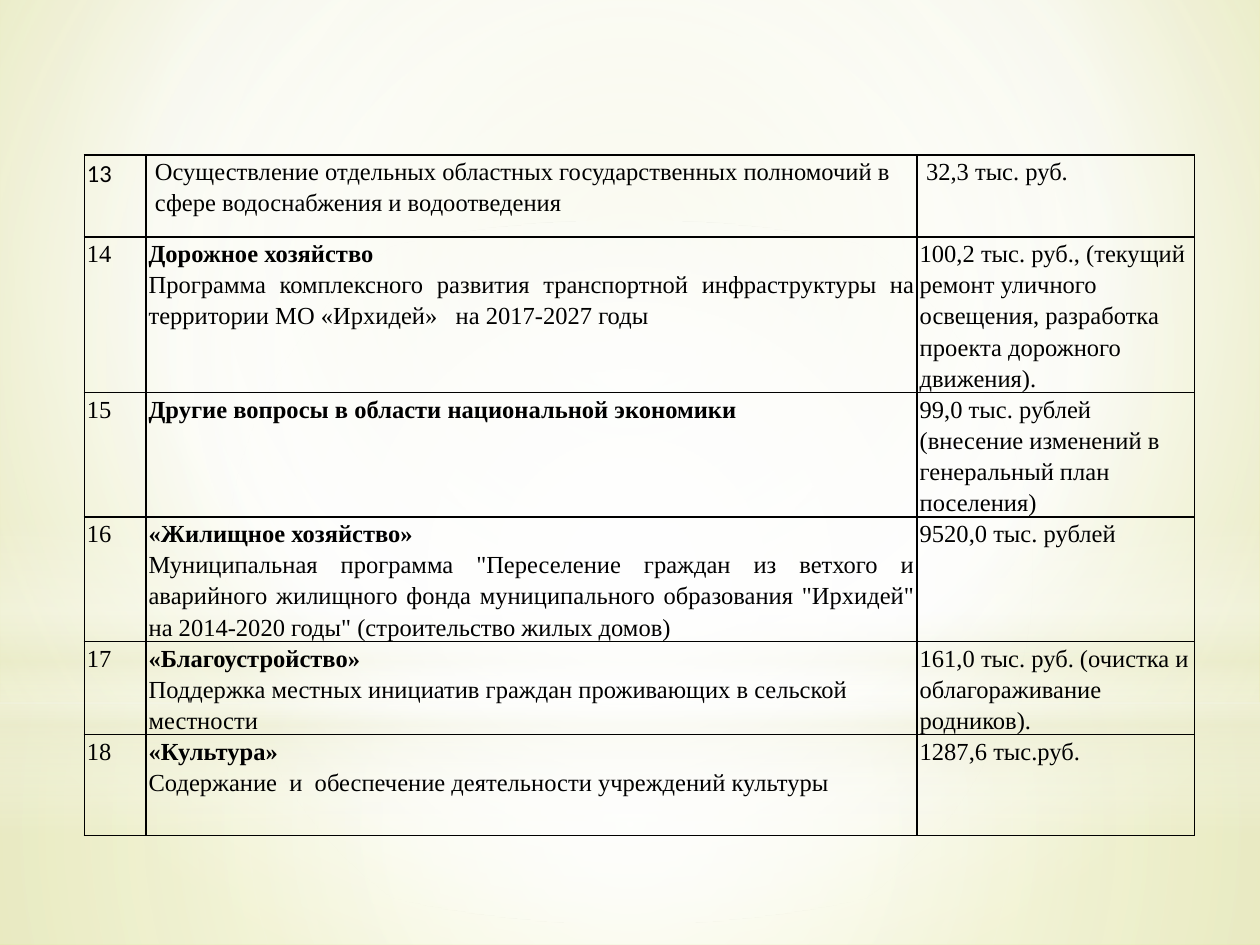
from lxml import etree
from pptx import Presentation
from pptx.dml.color import RGBColor
from pptx.enum.shapes import MSO_SHAPE as Shape
from pptx.enum.text import PP_ALIGN as Align
from pptx.oxml import parse_xml
from pptx.oxml.ns import nsdecls, qn
from pptx.util import Inches, Pt

WIDTH, HEIGHT = 10, 7.5
SERIF, SANS = "Times New Roman", "Calibri"
BLACK = "000000"
CENTRE = (50, 50, 50, 50)
COLUMNS = [0.49, 6.12, 2.2]
ROWS = [0.65, 1.22, 0.97, 0.97, 0.73, 0.8]
NARROW, WIDE = 0.02, 0.07

# Each row: number, heading, description, description alignment, amount
PROGRAMMES = [
    ("13", "", "Осуществление отдельных областных государственных полномочий "
     "в сфере водоснабжения и водоотведения", None, "32,3 тыс. руб."),
    ("14", "Дорожное хозяйство",
     "Программа комплексного развития транспортной инфраструктуры на "
     "территории МО «Ирхидей»   на 2017-2027 годы", Align.JUSTIFY,
     "100,2 тыс. руб., (текущий ремонт уличного освещения, разработка "
     "проекта дорожного движения)."),
    ("15", "Другие вопросы в области национальной экономики", "", None,
     "99,0 тыс. рублей (внесение изменений в генеральный план поселения)"),
    ("16", "«Жилищное хозяйство» ",
     'Муниципальная программа "Переселение граждан из ветхого и аварийного '
     'жилищного фонда муниципального образования "Ирхидей" на 2014-2020 '
     'годы" (строительство жилых домов)', Align.JUSTIFY, "9520,0 тыс. рублей"),
    ("17", "«Благоустройство»",
     "Поддержка местных инициатив граждан проживающих в сельской местности",
     None, "161,0 тыс. руб. (очистка и облагораживание родников)."),
    ("18", "«Культура»",
     "Содержание  и  обеспечение деятельности учреждений культуры", None,
     "1287,6 тыс.руб."),
]


def colour(value):
    return RGBColor.from_string(value)


def paint_gradient(fill, owner, stops, focus=None):
    """Fill with (position, colour, opacity) stops, circular if focus is given."""
    fill.gradient()
    old = owner.find(".//" + qn("a:gradFill"))
    new = parse_xml(f'<a:gradFill {nsdecls("a")} rotWithShape="1"/>')
    stop_list = etree.SubElement(new, qn("a:gsLst"))
    for position, value, opacity in stops:
        stop = etree.SubElement(stop_list, qn("a:gs"), pos=str(position * 1000))
        tint = etree.SubElement(stop, qn("a:srgbClr"), val=value)
        if opacity < 100:
            etree.SubElement(tint, qn("a:alpha"), val=str(opacity * 1000))
    if focus:
        circle = etree.SubElement(new, qn("a:path"), {"path": "circle"})
        sides = {side: str(share * 1000) for side, share in zip("ltrb", focus)}
        etree.SubElement(circle, qn("a:fillToRect"), sides)
    else:
        etree.SubElement(new, qn("a:lin"), ang=str(90 * 60000), scaled="0")
    old.getparent().replace(old, new)


def add_glow(slide, kind, top, height, stops, focus=CENTRE):
    """Full-width soft light; top and height are shares of the slide height."""
    glow = slide.shapes.add_shape(
        kind, 0, Inches(top * HEIGHT), Inches(WIDTH), Inches(height * HEIGHT))
    glow.shadow.inherit = False
    glow.line.fill.background()
    paint_gradient(glow.fill, glow._element, stops, focus)


def add_backdrop(slide):
    paint_gradient(
        slide.background.fill, slide._element,
        [(0, "E9EBC1", 100), (60, "FFFFFF", 100), (100, "DEE285", 100)],
        (20, 10, 20, 60))
    horizon = 0.744
    add_glow(slide, Shape.RECTANGLE, horizon, 1 - horizon,
             [(0, "FFFFFF", 91), (37, "FFFFFF", 76), (100, "ECEDD1", 79)])
    add_glow(slide, Shape.RECTANGLE, 0, horizon,
             [(0, "FFFFFF", 89), (48, "FFFFFF", 62), (100, "ECEDD1", 79)])
    add_glow(slide, Shape.RECTANGLE, 0.55, 1 / 3,
             [(0, "FFFFFF", 0), (29, "FFFFFF", 30), (45, "ECEDD1", 40),
              (55, "FFFFFF", 26), (65, "ECEDD1", 60), (100, "FFFFFF", 0)], None)
    add_glow(slide, Shape.OVAL, 0.233, horizon,
             [(0, "FFFFFF", 100), (56, "FFFFFF", 0)])


def style_cell(cell, inset):
    cell.margin_left = cell.margin_right = Inches(inset)
    cell.margin_top = cell.margin_bottom = 0
    properties = cell._tc.get_or_add_tcPr()
    for side in "LRTB":
        properties.append(parse_xml(
            f'<a:ln{side} {nsdecls("a")} w="{Pt(1)}"><a:solidFill>'
            f'<a:srgbClr val="{BLACK}"/></a:solidFill></a:ln{side}>'))
    cell.fill.background()


def write_cell(cell, lines, inset=NARROW, font=SERIF):
    """Write (text, bold, alignment) lines, one paragraph each."""
    style_cell(cell, inset)
    for index, (text, bold, alignment) in enumerate(lines):
        frame = cell.text_frame
        para = frame.add_paragraph() if index else frame.paragraphs[0]
        para.alignment = alignment
        para.line_spacing = 1.15
        span = para.add_run()
        span.text = text
        span.font.size = Pt(14)
        span.font.name = font
        span.font.bold = bold
        span.font.color.rgb = colour(BLACK)


def add_programme_table(slide, left, top):
    table = slide.shapes.add_table(
        len(ROWS), len(COLUMNS), Inches(left), Inches(top),
        Inches(sum(COLUMNS)), Inches(sum(ROWS))).table
    table.first_row = table.horz_banding = False
    for column, width in zip(table.columns, COLUMNS):
        column.width = Inches(width)
    for row, height, programme in zip(table.rows, ROWS, PROGRAMMES):
        row.height = Inches(height)
        number, heading, description, alignment, amount = programme
        lines = [(heading, True, alignment), (description, False, alignment)]
        inset, font = (NARROW, SERIF) if heading else (WIDE, SANS)
        write_cell(row.cells[0], [(number, False, None)], font=font)
        write_cell(row.cells[1], [line for line in lines if line[0]], inset)
        write_cell(row.cells[2], [(amount, False, None)], inset)


def main():
    deck = Presentation()
    deck.slide_width, deck.slide_height = Inches(WIDTH), Inches(HEIGHT)
    slide = deck.slides.add_slide(deck.slide_layouts[6])
    add_backdrop(slide)
    add_programme_table(slide, 0.67, 1.23)
    deck.save("out.pptx")


if __name__ == "__main__":
    main()
